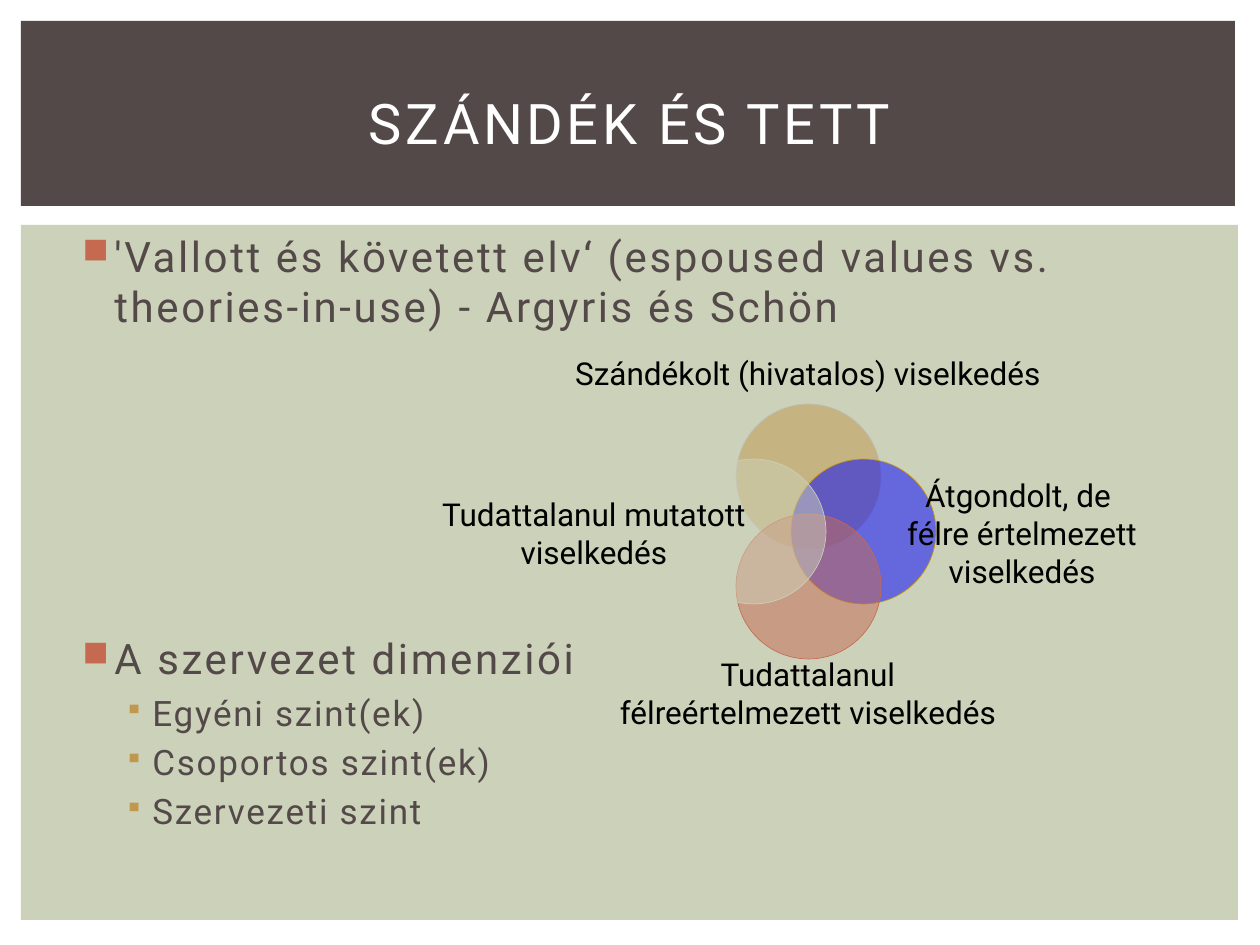
from lxml import etree
from pptx import Presentation
from pptx.dml.color import RGBColor
from pptx.enum.shapes import MSO_SHAPE
from pptx.enum.text import MSO_ANCHOR, PP_ALIGN
from pptx.oxml.ns import qn
from pptx.util import Emu, Pt

RECTANGLE, OVAL = MSO_SHAPE.RECTANGLE, MSO_SHAPE.OVAL
TOP, MIDDLE = MSO_ANCHOR.TOP, MSO_ANCHOR.MIDDLE
CENTER = PP_ALIGN.CENTER

PX_PER_INCH = 126
FONT = "Roboto"
COLORS = {
    "white": "FFFFFF", "black": "000000", "brown": "534949", "sage": "CCD1B9",
    "brick": "C66951", "ochre": "BF974D", "gold": "CC9900", "blue": "0000FF",
    "silver": "C0C0C0",
}

CIRCLE_SIZE = 145
VENN_LEFT, VENN_TOP = 736, 459
VENN_STEP = 55
LINE_HEIGHT = 38

# Direction from the middle, fill, outline, label, label centre and width
VENN = [
    ((0, -1), "ochre", "silver",
     ["Szándékolt (hivatalos) viselkedés"], (808, 373), 500),
    ((1, 0), "blue", "gold",
     ["Átgondolt, de \vfélre értelmezett", "viselkedés"], (1022, 533), 270),
    ((0, 1), "brick", "brick",
     ["Tudattalanul\vfélreértelmezett viselkedés"], (808, 693), 410),
    ((-1, 0), "sage", "sage",
     ["Tudattalanul mutatott\vviselkedés"], (594, 533), 340),
]

# Level, space before in points, text
OUTLINE = [
    (0, 0, "'Vallott és követett elv‘ (espoused values vs. theories-in-use)"
           " - Argyris és Schön"),
    (0, 172.5, "A szervezet dimenziói"),
    (1, 4.5, "Egyéni szint(ek)"),
    (1, 4, "Csoportos szint(ek)"),
    (1, 4, "Szervezeti szint"),
]

# Per level: size, letter spacing in points, indent and hang in px,
# bullet, bullet colour, bullet size in percent
LEVELS = [
    (24, 1.5, 38, 32, "■", "brick", 85),
    (20, 1, 76, 28, "▪", "ochre", 75),
]


def px(length):
    return Emu(round(length * 914400 / PX_PER_INCH))


def rgb(name):
    return RGBColor.from_string(COLORS[name])


def add_filled(slide, kind, left, top, width, height, fill):
    shape = slide.shapes.add_shape(kind, px(left), px(top), px(width), px(height))
    shape.shadow.inherit = False
    shape.fill.solid()
    shape.fill.fore_color.rgb = rgb(fill)
    shape.line.fill.background()
    return shape


def add_circle(slide, direction, fill, outline):
    """Place a half-transparent circle one step from the middle."""
    dx, dy = direction
    circle = add_filled(slide, OVAL, VENN_LEFT + dx * VENN_STEP,
                        VENN_TOP + dy * VENN_STEP, CIRCLE_SIZE, CIRCLE_SIZE, fill)
    circle.line.color.rgb = rgb(outline)
    circle.line.width = Pt(0.37)
    fill_color = circle.fill._xPr.find(qn("a:solidFill"))[0]
    etree.SubElement(fill_color, qn("a:alpha"), val="50000")


def add_frame(slide, left, top, width, height, anchor):
    box = slide.shapes.add_textbox(px(left), px(top), px(width), px(height))
    frame = box.text_frame
    frame.word_wrap = True
    frame.vertical_anchor = anchor
    return frame


def add_paragraph(frame, index, text, size, color):
    paragraph = frame.add_paragraph() if index else frame.paragraphs[0]
    paragraph.text = text
    paragraph.font.name = FONT
    paragraph.font.size = Pt(size)
    paragraph.font.color.rgb = rgb(color)
    return paragraph


def set_letter_spacing(paragraph, points):
    for run in paragraph.runs:
        run.font._element.set("spc", str(round(points * 100)))


def set_bullet(paragraph, indent, hang, char, color, percent):
    properties = paragraph._p.get_or_add_pPr()
    properties.set("marL", str(px(indent)))
    properties.set("indent", str(-px(hang)))
    bullet_color = etree.Element(qn("a:buClr"))
    etree.SubElement(bullet_color, qn("a:srgbClr"), val=COLORS[color])
    bullet_size = etree.Element(qn("a:buSzPct"), val=str(percent * 1000))
    bullet_char = etree.Element(qn("a:buChar"), char=char)
    # Bullets come before the default run properties
    defaults = properties.find(qn("a:defRPr"))
    for part in (bullet_color, bullet_size, bullet_char):
        defaults.addprevious(part)


def add_title(slide, text):
    frame = add_frame(slide, 53, 50, 1154, 145, MIDDLE)
    title = add_paragraph(frame, 0, text, 32, "white")
    title.alignment = CENTER
    set_letter_spacing(title, 2)


def add_outline(slide):
    frame = add_frame(slide, 64, 224, 1134, 684, TOP)
    for index, (level, space, text) in enumerate(OUTLINE):
        size, spacing, *bullet = LEVELS[level]
        item = add_paragraph(frame, index, text, size, "brown")
        item.level = level
        item.space_before = Pt(space)
        set_letter_spacing(item, spacing)
        set_bullet(item, *bullet)


def add_label(slide, lines, center, width):
    x, y = center
    line_count = len(lines) + sum(line.count("\v") for line in lines)
    height = (line_count + 1) * LINE_HEIGHT
    frame = add_frame(slide, x - width // 2, y - height // 2, width, height, MIDDLE)
    for index, line in enumerate(lines):
        add_paragraph(frame, index, line, 18, "black").alignment = CENTER


def main():
    deck = Presentation()
    deck.slide_width, deck.slide_height = px(1260), px(945)
    slide = deck.slides.add_slide(deck.slide_layouts[6])
    add_filled(slide, RECTANGLE, 21, 225, 1217, 695, "sage")
    add_filled(slide, RECTANGLE, 21, 21, 1214, 185, "brown")
    add_title(slide, "SZÁNDÉK ÉS TETT")
    add_outline(slide)
    for direction, fill, outline, lines, center, width in VENN:
        add_circle(slide, direction, fill, outline)
        add_label(slide, lines, center, width)
    deck.save("out.pptx")


if __name__ == "__main__":
    main()
